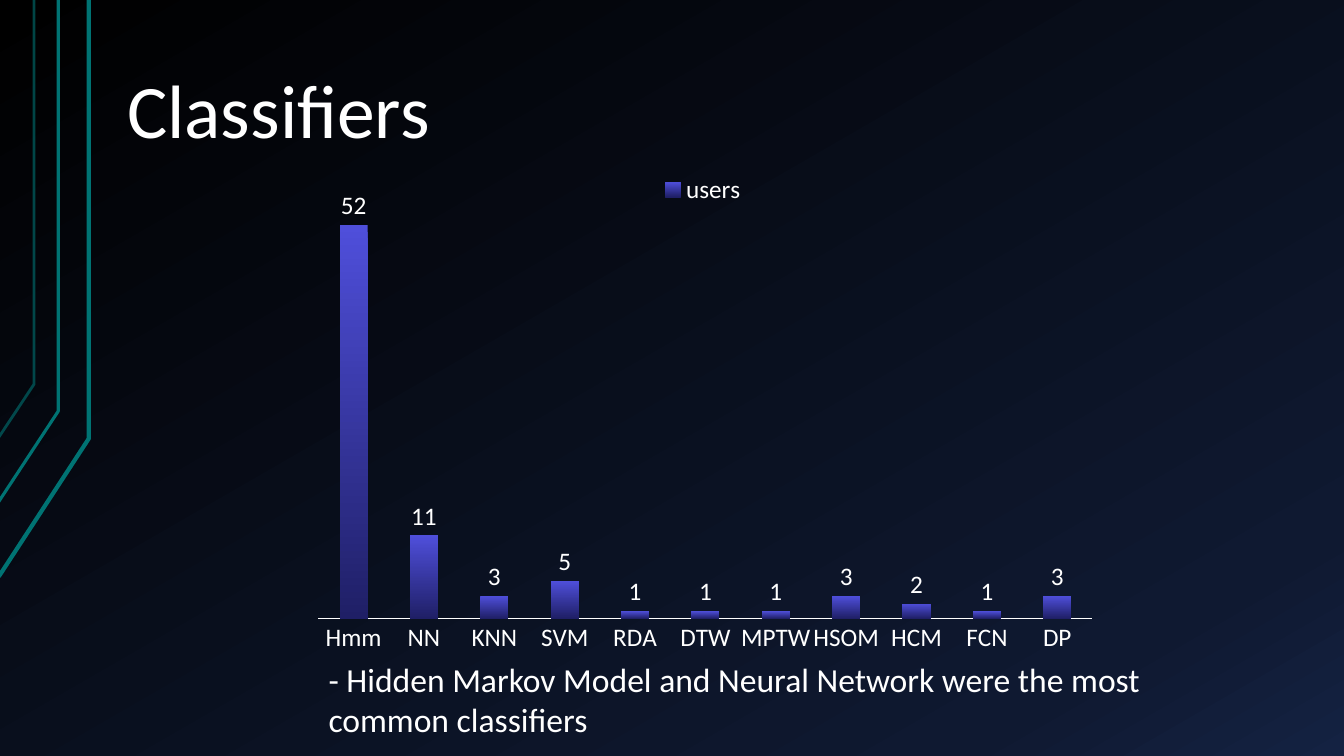
from copy import deepcopy

from lxml import etree
from pptx import Presentation
from pptx import util as u
from pptx.chart import data
from pptx.dml import color
from pptx.enum import chart as ch, text
from pptx.oxml import ns

Cm, Pt = u.Cm, u.Pt
WHITE, TEAL = "FFFFFF", "007373"
USERS = {"Hmm": 52, "NN": 11, "KNN": 3, "SVM": 5, "RDA": 1, "DTW": 1,
         "MPTW": 1, "HSOM": 3, "HCM": 2, "FCN": 1, "DP": 3}
# outer x, height of the bend, left x, left y (cm); width (pt); opacity (%)
CIRCUIT_LINES = [
    (2.24, 11.05, -0.03, 14.53, 3, 100),
    (1.47, 10.36, -0.05, 12.67, 2.25, 100),
    (0.86, 9.68, -0.03, 11.02, 2, 60),
]


def rgb(value):
    return color.RGBColor.from_string(value)


def apply(target, settings):
    for name, value in settings.items():
        setattr(target, name, value)


def set_font(font, size):
    apply(font, {"name": "Calibri", "size": Pt(size), "bold": False})
    font.color.rgb = rgb(WHITE)


def set_gradient(fill, clockwise, stops):
    """Fill with (position, colour) stops at a clockwise angle in degrees."""
    fill.gradient()
    fill.gradient_angle = (360 - clockwise) % 360
    first = fill.gradient_stops[0]._gs
    for _ in range(len(stops) - 2):
        first.addnext(deepcopy(first))
    for stop, (position, value) in zip(fill.gradient_stops, stops):
        stop.position = position
        stop.color.rgb = rgb(value)


def add_circuit_line(slide, x, bend_y, left_x, left_y, width, opacity):
    builder = slide.shapes.build_freeform(Cm(left_x), Cm(left_y))
    builder.add_line_segments([(Cm(x), Cm(bend_y)), (Cm(x), 0)], close=False)
    strand = builder.convert_to_shape()
    strand.shadow.inherit = False
    strand.fill.background()
    strand.line.width = Pt(width)
    strand.line.color.rgb = rgb(TEAL)
    if opacity < 100:
        tint = strand.line._get_or_add_ln().find(".//" + ns.qn("a:srgbClr"))
        etree.SubElement(tint, ns.qn("a:alpha"), val=str(opacity * 1000))


def write(box, frame, content, size, wrap):
    apply(box, dict(zip(("left", "top", "width", "height"), map(Cm, frame))))
    apply(box.text_frame, {"text": content, "word_wrap": wrap,
                           "auto_size": text.MSO_AUTO_SIZE.SHAPE_TO_FIT_TEXT,
                           "vertical_anchor": text.MSO_ANCHOR.TOP})
    paragraph = box.text_frame.paragraphs[0]
    paragraph.alignment = text.PP_ALIGN.LEFT
    set_font(paragraph.runs[0].font, size)


def place(part, index, **fractions):
    """Give a chart part a fixed place, in fractions of the chart."""
    for old in part.findall(ns.qn("c:layout")):
        part.remove(old)
    layout = etree.Element(ns.qn("c:layout"))
    manual = etree.SubElement(layout, ns.qn("c:manualLayout"))
    if "h" in fractions:
        etree.SubElement(manual, ns.qn("c:layoutTarget"), val="inner")
    for mode in ("xMode", "yMode"):
        etree.SubElement(manual, ns.qn("c:" + mode), val="edge")
    for key, value in fractions.items():
        etree.SubElement(manual, ns.qn("c:" + key), val=str(value))
    part.insert(index, layout)


def add_users_chart(slide):
    table = data.CategoryChartData()
    table.categories = list(USERS)
    table.add_series("users", list(USERS.values()))
    chart = slide.shapes.add_chart(
        ch.XL_CHART_TYPE.COLUMN_CLUSTERED,
        Cm(7.62), Cm(4.01), Cm(20.32), Cm(12.73), table).chart
    apply(chart, {"has_title": False, "has_legend": True})
    set_font(chart.font, 18)

    apply(chart.legend, {"position": ch.XL_LEGEND_POSITION.TOP,
                         "include_in_layout": False})
    place(chart.legend._element, 1, x=0.44, y=0.02)
    place(chart._chartSpace.chart.plotArea, 0, x=0.02, y=0.01, w=0.96, h=0.9)

    apply(chart.value_axis, {"visible": False, "has_major_gridlines": False,
                             "minimum_scale": 0, "maximum_scale": 60})
    apply(chart.category_axis, {"major_tick_mark": ch.XL_TICK_MARK.NONE,
                                "has_major_gridlines": False})
    chart.category_axis.format.line.color.rgb = rgb(WHITE)

    plot = chart.plots[0]
    apply(plot, {"gap_width": 150, "vary_by_categories": False,
                 "has_data_labels": True})
    apply(plot.data_labels, {"show_value": True,
                             "position": ch.XL_LABEL_POSITION.OUTSIDE_END})
    set_font(plot.data_labels.font, 18)
    set_gradient(plot.series[0].format.fill, 90,
                 [(0, "4F4FDB"), (1, "1F1F66")])


def main():
    deck = Presentation()
    apply(deck, {"slide_width": Cm(33.87), "slide_height": Cm(19.05)})
    slide = deck.slides.add_slide(deck.slide_layouts[5])
    set_gradient(slide.background.fill, 60,
                 [(0, "000000"), (0.85, "0F1931"), (1, "142242")])
    for line in CIRCUIT_LINES:
        add_circuit_line(slide, *line)
    write(slide.shapes.title, (2.95, 1.47, 8.23, 2.57), "Classifiers", 54, False)
    add_users_chart(slide)
    finding = slide.shapes.add_textbox(0, 0, 0, 0)
    write(finding, (8.03, 16.48, 21.16, 2.31),
          "- Hidden Markov Model and Neural Network were the most "
          "common classifiers", 24, True)
    deck.save("out.pptx")


if __name__ == "__main__":
    main()
